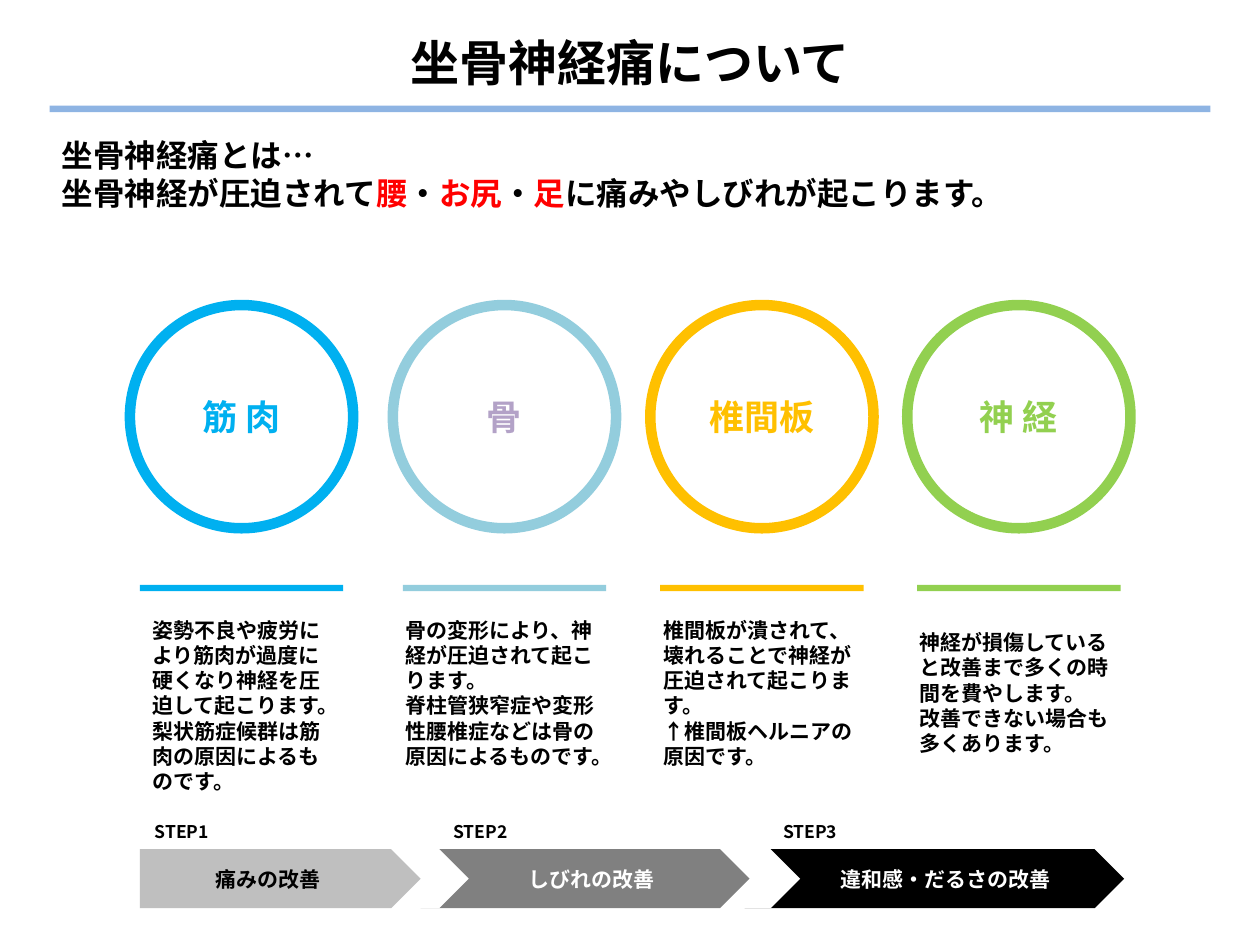
from lxml.etree import SubElement
from pptx import Presentation
from pptx.dml.color import RGBColor
from pptx.enum.shapes import MSO_SHAPE
from pptx.enum.text import MSO_ANCHOR, MSO_AUTO_SIZE, PP_ALIGN
from pptx.oxml.ns import qn
from pptx.util import Cm, Pt

BLACK = RGBColor(0x00, 0x00, 0x00)
WHITE = RGBColor(0xFF, 0xFF, 0xFF)
RED = RGBColor(0xFF, 0x00, 0x00)
RULE_BLUE = RGBColor(0x8E, 0xB4, 0xE3)
SKY = RGBColor(0x00, 0xB0, 0xF0)
AQUA = RGBColor(0x93, 0xCD, 0xDD)
LILAC = RGBColor(0xB3, 0xA2, 0xC7)
AMBER = RGBColor(0xFF, 0xC0, 0x00)
GREEN = RGBColor(0x92, 0xD0, 0x50)
LIGHT_GRAY = RGBColor(0xBF, 0xBF, 0xBF)
GRAY = RGBColor(0x80, 0x80, 0x80)

DIAMETER = 4.5
BAR_WIDTH = 4.1
ARROW_TOP = 17.12
ARROW_HEIGHT = 1.19


class SlideBuilder:
    font_name = "Noto Sans CJK JP"

    def __init__(self, slide):
        self.slide = slide
        self.shapes = slide.shapes

    def start_group(self):
        self.shapes = self.slide.shapes.add_group_shape().shapes

    def fill_text(self, text_frame, lines, size, color=BLACK, align=PP_ALIGN.LEFT):
        text_frame.word_wrap = False
        for index, line in enumerate(lines):
            paragraph = text_frame.paragraphs[0] if index == 0 else text_frame.add_paragraph()
            paragraph.alignment = align
            runs = [(line, color)] if isinstance(line, str) else line
            for text, run_color in runs:
                run = paragraph.add_run()
                run.text = text
                run.font.name = self.font_name
                run.font.size = Pt(size)
                run.font.bold = True
                run.font.color.rgb = run_color
                SubElement(run.font._element, qn("a:ea"), typeface=self.font_name)

    def title(self, text, left, top, width, height):
        shape = self.slide.shapes.title
        shape.left, shape.top, shape.width, shape.height = Cm(left), Cm(top), Cm(width), Cm(height)
        self.fill_text(shape.text_frame, [text], 28, align=PP_ALIGN.CENTER)
        shape.text_frame.auto_size = MSO_AUTO_SIZE.NONE
        shape.text_frame.vertical_anchor = MSO_ANCHOR.MIDDLE

    def text(self, lines, left, top, width, height, size, color=BLACK, align=PP_ALIGN.LEFT):
        shape = self.shapes.add_textbox(Cm(left), Cm(top), Cm(width), Cm(height))
        self.fill_text(shape.text_frame, lines, size, color, align)
        shape.text_frame.auto_size = MSO_AUTO_SIZE.SHAPE_TO_FIT_TEXT

    def filled(self, kind, left, top, width, height, color):
        shape = self.shapes.add_shape(kind, Cm(left), Cm(top), Cm(width), Cm(height))
        shape.shadow.inherit = False
        shape.fill.solid()
        shape.fill.fore_color.rgb = color
        shape.line.fill.background()

    def ring(self, left, top, diameter, color):
        shape = self.shapes.add_shape(MSO_SHAPE.OVAL, Cm(left), Cm(top), Cm(diameter), Cm(diameter))
        shape.shadow.inherit = False
        shape.fill.background()
        shape.line.color.rgb = color
        shape.line.width = Pt(6)


def add_cause(builder, left, color, label, label_width, label_color, text_left, text_top, text_width, lines):
    builder.ring(left, 6.15, DIAMETER, color)
    bar_left = left + (DIAMETER - BAR_WIDTH) / 2
    builder.filled(MSO_SHAPE.RECTANGLE, bar_left, 11.79, BAR_WIDTH, 0.13, color)
    label_left = left + (DIAMETER - label_width) / 2
    builder.text([label], label_left, 7.85, label_width, 1.12, 20, label_color, PP_ALIGN.CENTER)
    text_height = 0.26 + 0.51 * len(lines)
    builder.text(lines, text_left, text_top, text_width, text_height, 12)


def main():
    presentation = Presentation()
    presentation.slide_width = Cm(25.4)
    presentation.slide_height = Cm(19.05)
    builder = SlideBuilder(presentation.slides.add_slide(presentation.slide_layouts[5]))

    builder.title("坐骨神経痛について", 7.95, 0.53, 9.5, 1.45)
    builder.filled(MSO_SHAPE.RECTANGLE, 1, 2.13, 23.4, 0.13, RULE_BLUE)
    symptoms = [
        ("坐骨神経が圧迫されて", BLACK), ("腰", RED), ("・", BLACK), ("お尻", RED),
        ("・", BLACK), ("足", RED), ("に痛みやしびれが起こります。", BLACK),
    ]
    builder.text(["坐骨神経痛とは…", symptoms], 1, 2.62, 19.76, 1.8, 18)

    causes = [
        (2.62, SKY, "筋 肉", 2.16, SKY, 2.82, 12.32, 4.37,
         ["姿勢不良や疲労に", "より筋肉が過度に", "硬くなり神経を圧", "迫して起こります。",
          "梨状筋症候群は筋", "肉の原因によるも", "のです。"]),
        (7.92, AQUA, "骨", 1.22, LILAC, 7.92, 12.32, 4.78,
         ["骨の変形により、神", "経が圧迫されて起こ", "ります。",
          "脊柱管狭窄症や変形", "性腰椎症などは骨の", "原因によるものです。"]),
        (13.11, AMBER, "椎間板", 2.64, AMBER, 13.13, 12.32, 4.37,
         ["椎間板が潰されて、", "壊れることで神経が", "圧迫されて起こりま", "す。",
          "↑椎間板ヘルニアの", "原因です。"]),
        (18.29, GREEN, "神 経", 2.16, GREEN, 18.29, 12.57, 4.37,
         ["神経が損傷している", "と改善まで多くの時", "間を費やします。",
          "改善できない場合も", "多くあります。"]),
    ]
    for cause in causes:
        add_cause(builder, *cause)

    builder.start_group()
    arrows = [
        (15.01, 7.65, BLACK), (14.63, 1.5, WHITE), (8.48, 6.63, GRAY),
        (8.15, 1.3, WHITE), (2.82, 5.66, LIGHT_GRAY),
    ]
    for left, width, color in arrows:
        builder.filled(MSO_SHAPE.PENTAGON, left, ARROW_TOP, width, ARROW_HEIGHT, color)

    steps = [
        ("痛みの改善", 4.09, 2.64, BLACK, 2.87),
        ("しびれの改善", 10.41, 3.07, WHITE, 8.89),
        ("違和感・だるさの改善", 16.69, 4.78, WHITE, 15.54),
    ]
    for number, (label, left, width, color, step_left) in enumerate(steps, 1):
        builder.text([label], left, 17.35, width, 0.77, 12, color)
        builder.text([f"STEP{number}"], step_left, 16.43, 1.75, 0.69, 10)

    presentation.save("out.pptx")


if __name__ == "__main__":
    main()
